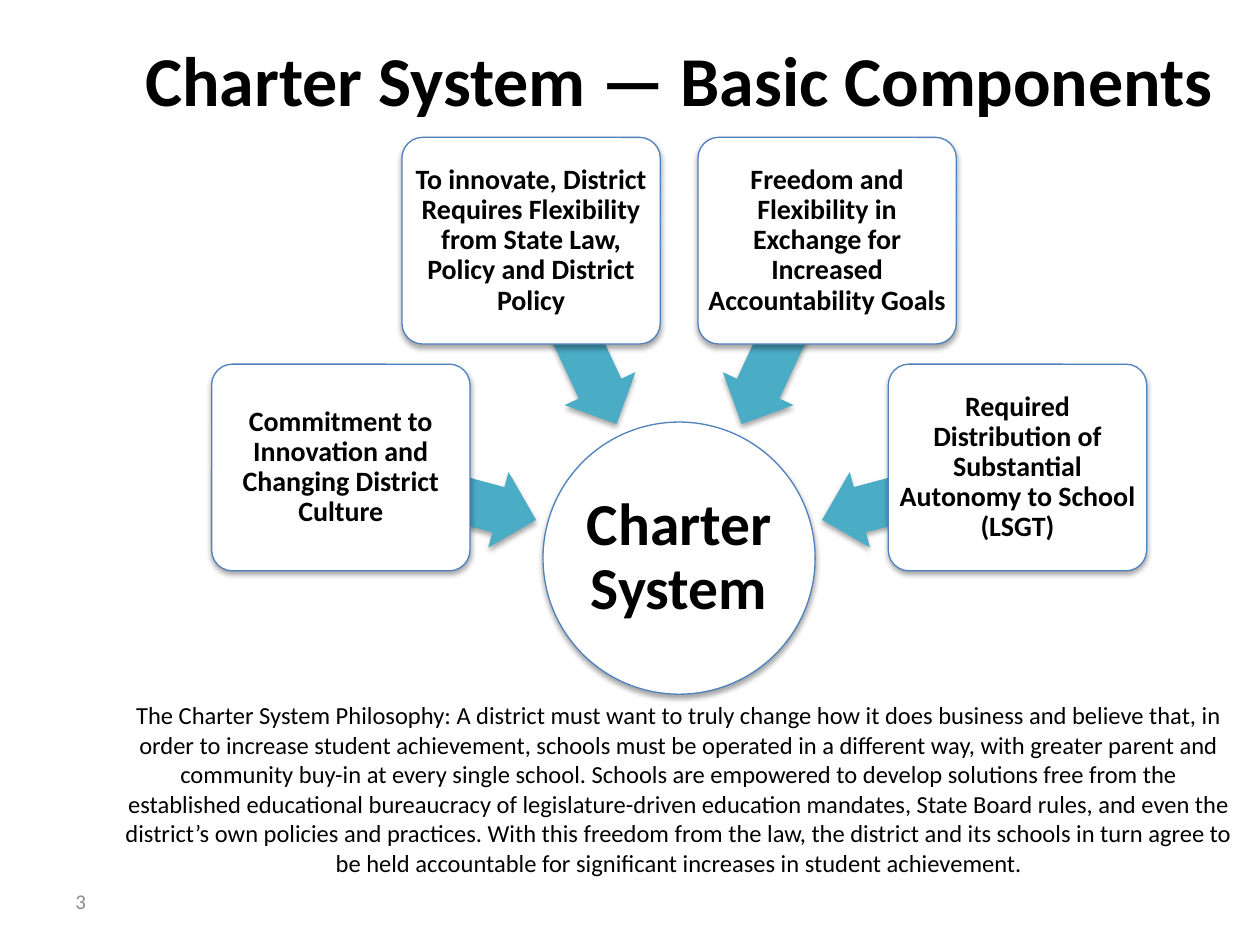
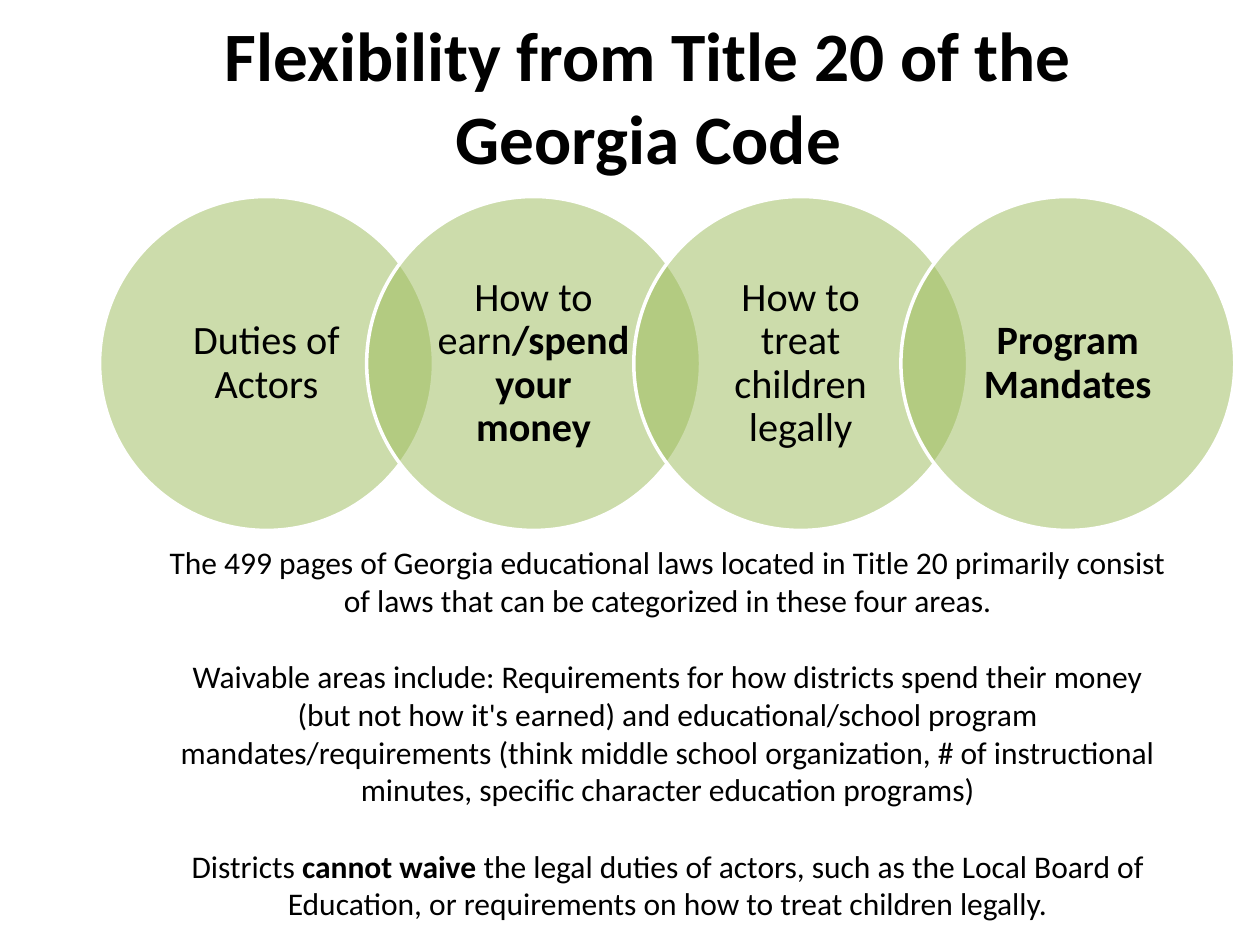
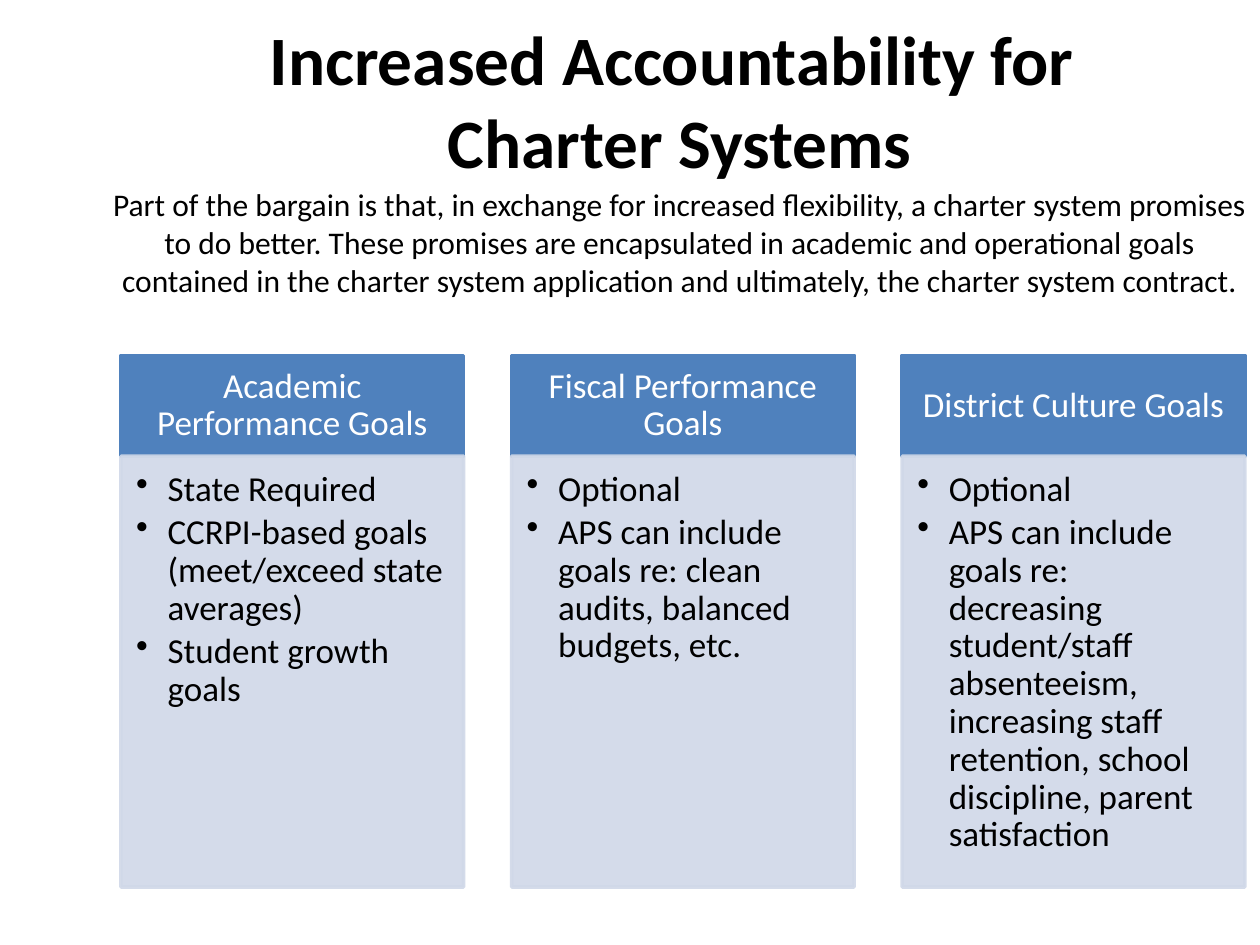
from math import cos, sin, radians

from lxml import etree
from pptx import Presentation, util as u
from pptx.dml.color import RGBColor
from pptx.enum import shapes, text
from pptx.oxml.ns import qn

# Shared style
FONT = "Calibri"
BLACK = RGBColor(0, 0, 0)
WHITE = RGBColor(255, 255, 255)
GRAY = RGBColor(0x8C, 0x8C, 0x8C)
BLUE = RGBColor(0x4F, 0x81, 0xBD)
TEAL = RGBColor(0x4B, 0xAC, 0xC6)
GREEN = RGBColor(0x9B, 0xBB, 0x59)
PALE = RGBColor(0xD0, 0xD8, 0xE8)

KIND = shapes.MSO_SHAPE
LEFT, MID = text.PP_ALIGN.LEFT, text.PP_ALIGN.CENTER
TOP, CENTER = text.MSO_ANCHOR.TOP, text.MSO_ANCHOR.MIDDLE

# Slide content
CARDS = [
    "Commitment to Innovation and Changing District Culture",
    "To innovate, District Requires Flexibility from State Law, "
    "Policy and District Policy",
    "Freedom and Flexibility in Exchange for Increased Accountability Goals",
    "Required Distribution of Substantial Autonomy to School (LSGT)",
]
CREED = (
    "The Charter System Philosophy: A district must want to truly change how "
    "it does business and believe that, in order to increase student "
    "achievement, schools must be operated in a different way, with greater "
    "parent and community buy-in at every single school. Schools are empowered "
    "to develop solutions free from the established educational bureaucracy of "
    "legislature-driven education mandates, State Board rules, and even the "
    "district’s own policies and practices. With this freedom from the law, "
    "the district and its schools in turn agree to be held accountable for "
    "significant increases in student achievement."
)
AREAS = [  # label, bold
    ("Duties of Actors", False),
    ("How to earn*/spend your money", False),
    ("How to treat children legally", False),
    ("Program Mandates", True),
]
LAWS = [
    "The 499 pages of Georgia educational laws located in Title 20 primarily "
    "consist of laws that can be categorized in these four areas.",
    "Waivable areas include: Requirements for how districts spend their money "
    "(but not how it's earned) and educational/school program "
    "mandates/requirements (think middle school organization, # of "
    "instructional minutes, specific character education programs)",
    "Districts *cannot waive *the legal duties of actors, such as the Local "
    "Board of Education, or requirements on how to treat children legally.",
]
PLEDGE = (
    "Part of the bargain is that, in exchange for increased flexibility, a "
    "charter system promises to do better. These promises are encapsulated in "
    "academic and operational goals contained in the charter system "
    "application and ultimately, the charter system contract."
)
GOALS = [
    ("Academic Performance Goals",
     ["State Required", "CCRPI-based goals (meet/exceed state averages)",
      "Student growth goals"]),
    ("Fiscal Performance Goals",
     ["Optional",
      "APS can include goals re: clean audits, balanced budgets, etc."]),
    ("District Culture Goals",
     ["Optional",
      "APS can include goals re: decreasing student/staff absenteeism, "
      "increasing staff retention, school discipline, parent satisfaction"]),
]


def write(shape, paras, size, color=BLACK, bold=False, align=MID, anchor=TOP,
          pad=(0.1, 0.05, 0.1, 0.05), lead=None, gap=0, dots=False):
    """Fill a shape with paragraphs; an asterisk switches bold on or off."""
    frame = shape.text_frame
    frame.word_wrap = True
    frame.vertical_anchor = anchor
    (frame.margin_left, frame.margin_top,
     frame.margin_right, frame.margin_bottom) = map(u.Inches, pad)
    for i, line in enumerate(paras):
        para = frame.add_paragraph() if i else frame.paragraphs[0]
        para.alignment = align
        if lead:
            para.line_spacing = lead
        if i and gap:
            para.space_before = u.Pt(gap)
        if dots:
            bullet(para)
        first, *rest = line.split("*")
        para.text = first
        for run in para.runs:
            style(run.font, size, color, bold)
        for n, part in enumerate(rest, 1):
            run = para.add_run()
            run.text = part
            style(run.font, size, color, bold ^ (n % 2 == 1))


def style(font, size, color, bold):
    font.name, font.size, font.bold = FONT, u.Pt(size), bold
    font.color.rgb = color


def bullet(para):
    props = para._p.get_or_add_pPr()
    props.set("marL", str(u.Inches(0.25)))
    props.set("indent", str(u.Inches(-0.25)))
    etree.SubElement(props, qn("a:buChar")).set("char", "•")


def label(slide, box, paras, size, **look):
    write(slide.shapes.add_textbox(*map(u.Inches, box)), paras, size, **look)


def title(slide, box, words, size=39.6):
    label(slide, box, [words], size, bold=True, anchor=CENTER)


def block(slide, kind, box, fill, line=None, width=0.75):
    shape = slide.shapes.add_shape(kind, *map(u.Inches, box))
    shape.shadow.inherit = False
    shape.fill.solid()
    shape.fill.fore_color.rgb = fill
    if line is None:
        shape.line.fill.background()
    else:
        shape.line.color.rgb = line
        shape.line.width = u.Pt(width)
    return shape


def fade(shape, share, color):
    """Give every use of a colour in the shape this opacity in percent."""
    for node in shape._element.spPr.iter(qn("a:srgbClr")):
        if node.get("val") == str(color):
            etree.SubElement(node, qn("a:alpha")).set("val", str(share * 1000))


def shade(shape):
    """Cast a soft shadow straight down."""
    effects = shape._element.spPr.find(qn("a:effectLst"))
    cast = etree.SubElement(
        effects, qn("a:outerShdw"), blurRad=str(u.Pt(3.1)),
        dist=str(u.Pt(1.8)), dir="5400000", rotWithShape="0")
    tint = etree.SubElement(cast, qn("a:srgbClr"), val="000000")
    etree.SubElement(tint, qn("a:alpha"), val="35000")


def orbit(angle, reach, wide, high):
    """Box centred at an angle and distance from the hub."""
    x = 5.39 + reach * cos(radians(angle))
    y = 4.43 + reach * sin(radians(angle))
    return x - wide / 2, y - high / 2, wide, high


def basics(slide):
    title(slide, (0.89, 0.3, 9, 0.64), "Charter System — Basic Components", 40)
    label(slide, (0.5, 6.95, 2.33, 0.4), ["3"], 12, color=GRAY, align=LEFT,
          anchor=CENTER)
    # Hub
    hub = block(slide, KIND.OVAL, orbit(0, 0, 2.16, 2.16), WHITE, BLUE)
    shade(hub)
    write(hub, ["Charter System"], 34, bold=True, anchor=CENTER,
          pad=[0.02] * 4, lead=0.9)
    # Arrows and cards around the hub
    for i, words in enumerate(CARDS):
        angle = 195 + 50 * i
        arrow = block(slide, KIND.LEFT_ARROW, orbit(angle, 1.98, 1.61, 0.62),
                      TEAL)
        arrow.adjustments[0] = 0.6
        arrow.rotation = angle
        shade(arrow)
        card = block(slide, KIND.ROUNDED_RECTANGLE,
                     orbit(angle, 2.78, 2.05, 1.64), WHITE, BLUE)
        card.adjustments[0] = 0.1
        shade(card)
        write(card, [words], 16, bold=True, anchor=CENTER, pad=[0.03] * 4,
              lead=0.9)
    label(slide, (0.89, 5.51, 9, 1.51), [CREED], 14)


def waivers(slide):
    title(slide, (0.79, 0.3, 8.71, 0.91),
          "Flexibility from Title 20 of the Georgia Code")
    # Overlapping circles
    size = 2.65
    for i, (words, bold) in enumerate(AREAS):
        ring = block(slide, KIND.OVAL, (0.79 + 0.8 * size * i, 1.56, size, size),
                     GREEN, WHITE, 2)
        fade(ring, 50, GREEN)
        write(ring, [words], 23, bold=bold, anchor=CENTER,
              pad=(0.15, 0.03, 0.15, 0.03), lead=0.9)
    label(slide, (1.21, 4.26, 8.18, 3.13), LAWS, 18, gap=22)


def targets(slide):
    title(slide, (0.79, 0.3, 9.21, 0.98),
          "Increased Accountability for \vCharter Systems")
    label(slide, (0.79, 1.42, 9.21, 1.31), [PLEDGE], 18)
    # Goal columns
    for i, (name, items) in enumerate(GOALS):
        x = 0.96 + 3.1 * i
        head = block(slide, KIND.RECTANGLE, (x, 2.82, 2.72, 0.8), BLUE, BLUE, 2)
        write(head, [name], 20, color=WHITE, anchor=CENTER,
              pad=(0.16, 0.09, 0.16, 0.09), lead=0.9)
        body = block(slide, KIND.RECTANGLE, (x, 3.62, 2.72, 3.42), PALE, PALE, 2)
        fade(body, 90, PALE)
        write(body, items, 20, align=LEFT, pad=(0.12, 0.12, 0.16, 0.17),
              lead=0.9, gap=3, dots=True)


def main():
    deck = Presentation()
    deck.slide_width, deck.slide_height = u.Inches(10), u.Inches(7.5)
    for draw in (basics, waivers, targets):
        draw(deck.slides.add_slide(deck.slide_layouts[6]))
    deck.save("out.pptx")


if __name__ == "__main__":
    main()
